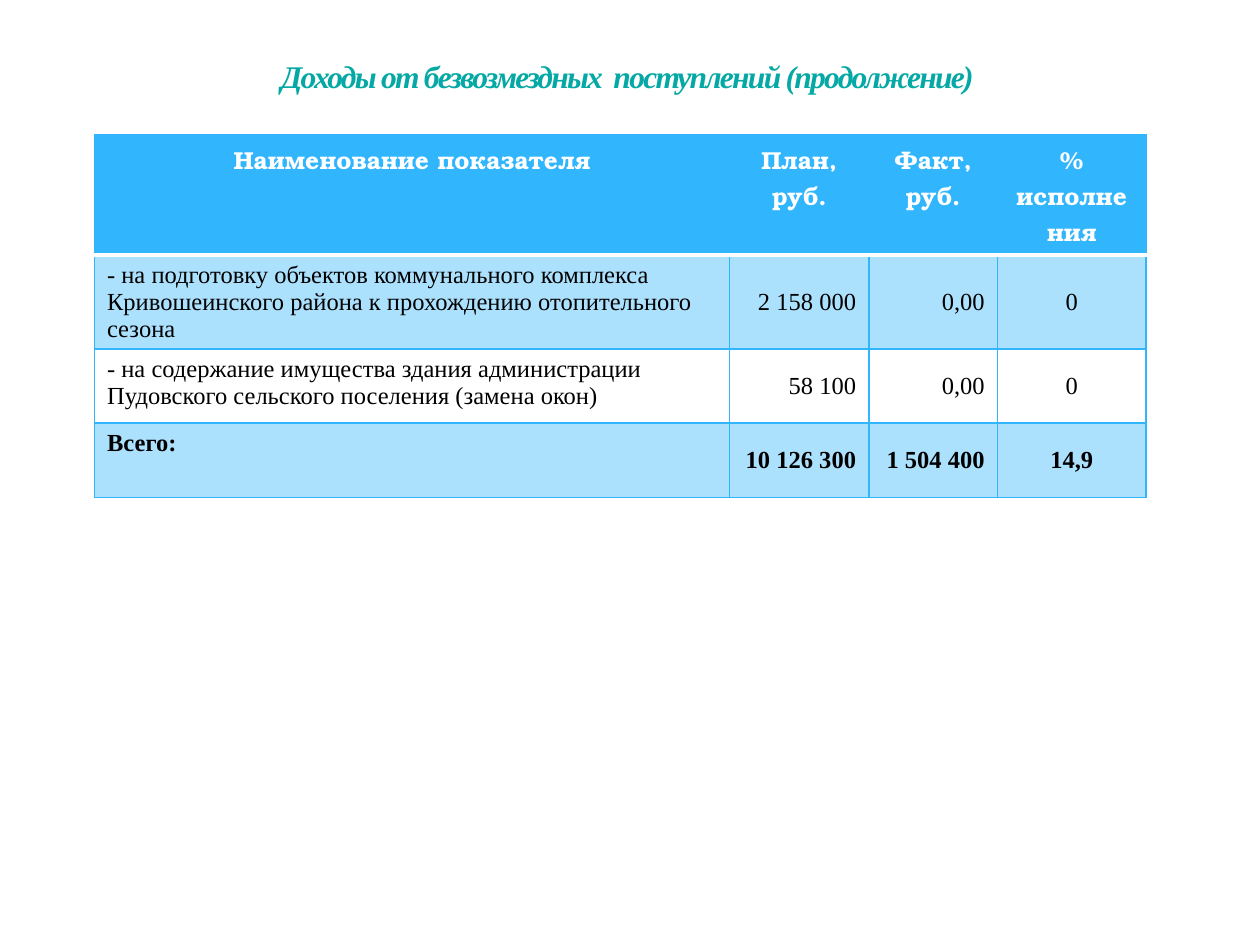
from lxml import etree
from pptx import Presentation
from pptx.dml.color import RGBColor
from pptx.enum.text import MSO_ANCHOR, PP_ALIGN
from pptx.oxml.ns import qn
from pptx.util import Pt

LEFT, CENTER, RIGHT = PP_ALIGN.LEFT, PP_ALIGN.CENTER, PP_ALIGN.RIGHT
TOP, MIDDLE, BOTTOM = MSO_ANCHOR.TOP, MSO_ANCHOR.MIDDLE, MSO_ANCHOR.BOTTOM
SERIF, HEADER_FONT = "Times New Roman", "TeX Gyre Bonum"
BLUE, WHITE, BLACK, TEAL = "31B6FD", "FFFFFF", "000000", "04A8A4"


def style_run(span, font, size, color, bold):
    span.font.name = font
    span.font.size = Pt(size)
    span.font.bold = bold
    span.font.color.rgb = RGBColor.from_string(color)


def add_border(cell, position, side, color, width):
    line = etree.Element(qn(f"a:{side}"), w=str(Pt(width)))
    fill = etree.SubElement(line, qn("a:solidFill"))
    etree.SubElement(fill, qn("a:srgbClr"), val=color)
    cell._tc.get_or_add_tcPr().insert(position, line)


deck = Presentation()
deck.slide_width, deck.slide_height = Pt(720), Pt(540)
page = deck.slides.add_slide(deck.slide_layouts[5])

# Title
title = page.shapes.title
title.left, title.top, title.width, title.height = Pt(82), Pt(0), Pt(553), Pt(54)
frame = title.text_frame
frame.word_wrap = True
frame.vertical_anchor = BOTTOM
frame.margin_top = frame.margin_bottom = Pt(0)
para = frame.paragraphs[0]
para.alignment = CENTER
span = para.add_run()
span.text = "Доходы от безвозмездных  поступлений (продолжение)"
style_run(span, SERIF, 18, TEAL, True)
span.font.italic = True
span.font._element.set("spc", "-100")

# Table
rows = [
    ["Наименование показателя", "План, руб.", "Факт, руб.", "% исполнения"],
    ["- на подготовку объектов коммунального комплекса Кривошеинского района "
     "к прохождению отопительного сезона", "2 158 000", "0,00", "0"],
    ["- на содержание имущества здания администрации Пудовского сельского "
     "поселения (замена окон)", "58 100", "0,00", "0"],
    ["Всего:", "10 126 300", "1 504 400", "14,9"],
]
widths = [363, 79.5, 73.5, 85]
heights = [60, 42.4, 42.4, 42.4]
alignments = [LEFT, RIGHT, RIGHT, CENTER]
last_row = len(rows) - 1

table = page.shapes.add_table(len(rows), len(widths), Pt(54), Pt(77),
                              Pt(sum(widths)), Pt(sum(heights))).table
table.horz_banding = False
for column, width in zip(table.columns, widths):
    column.width = Pt(width)
for row, height in zip(table.rows, heights):
    row.height = Pt(height)

for row_index, texts in enumerate(rows):
    header = row_index == 0
    for column_index, text in enumerate(texts):
        cell = table.cell(row_index, column_index)
        cell.vertical_anchor = TOP if header or column_index == 0 else MIDDLE

        # Header is solid, odd rows are tinted, even rows stay clear
        if header or row_index % 2:
            cell.fill.solid()
            cell.fill.fore_color.rgb = RGBColor.from_string(BLUE)
            if not header:
                tint = cell._tc.tcPr.find(".//" + qn("a:srgbClr"))
                etree.SubElement(tint, qn("a:alpha"), val="40000")
        else:
            cell.fill.background()

        # Blue grid, with a thick white rule under the header
        white_side = {0: "lnB", 1: "lnT"}.get(row_index)
        for position, side in enumerate(["lnL", "lnR", "lnT", "lnB"]):
            color, width = (WHITE, 3) if side == white_side else (BLUE, 1)
            add_border(cell, position, side, color, width)

        para = cell.text_frame.paragraphs[0]
        para.alignment = CENTER if header else alignments[column_index]
        span = para.add_run()
        span.text = text
        if header:
            style_run(span, HEADER_FONT, 14, WHITE, True)
        else:
            style_run(span, SERIF, 14, BLACK, row_index == last_row)

deck.save("out.pptx")
